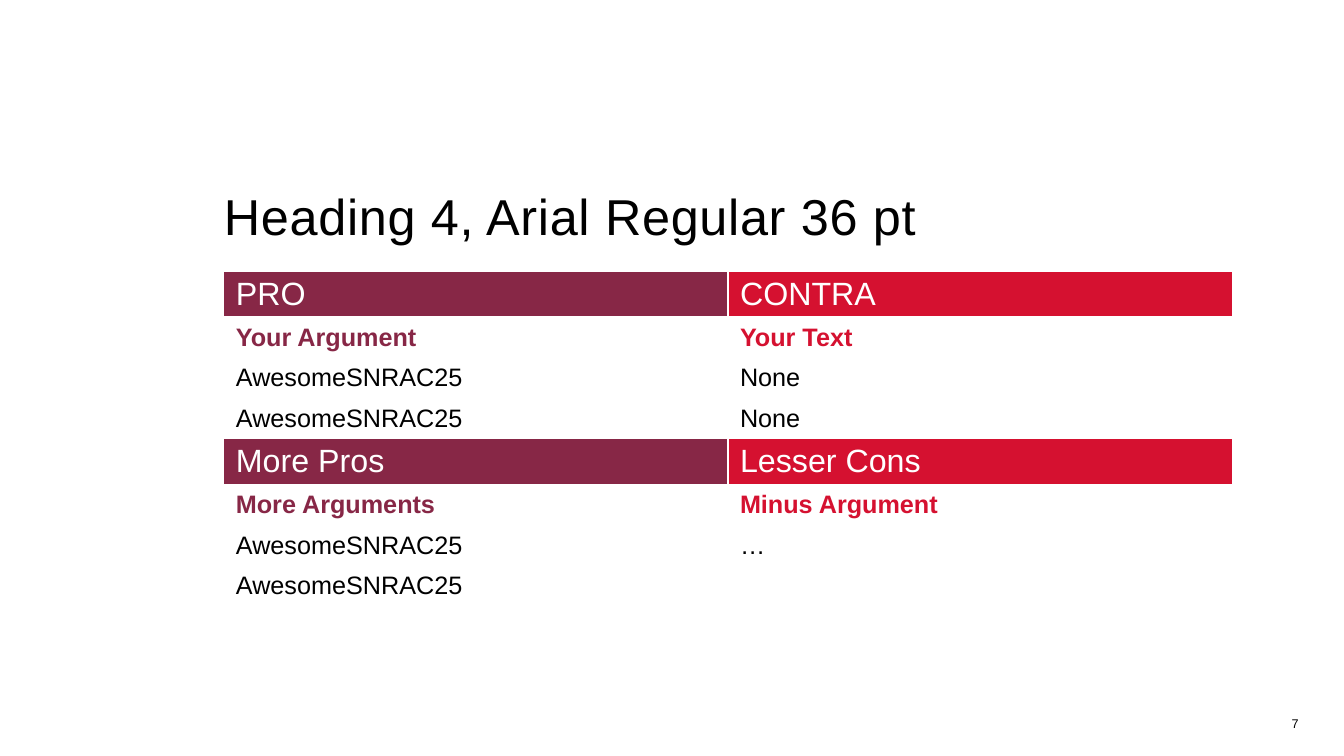
"""Build a slide that sets pro and contra arguments side by side."""
from dataclasses import dataclass

import lxml.etree
import pptx
import pptx.dml.color
import pptx.enum.text
import pptx.oxml.ns
import pptx.util

Inches = pptx.util.Inches
Pt = pptx.util.Pt
Align = pptx.enum.text.PP_ALIGN
Anchor = pptx.enum.text.MSO_ANCHOR

BLACK, WHITE = "000000", "FFFFFF"
COLUMN_COLORS = ("872746", "D51130")


@dataclass(frozen=True)
class RowStyle:
    height: float
    size: float
    top: float
    bold: bool = False
    filled: bool = False
    color: str | None = None


BAND = RowStyle(0.46, 23, 0.05, filled=True, color=WHITE)
LEAD = RowStyle(0.4, 18, 0.06, bold=True)
BODY = RowStyle(0.4, 18, 0.06, color=BLACK)

ROWS = (
    (BAND, ("PRO", "CONTRA")),
    (LEAD, ("Your Argument", "Your Text")),
    (BODY, ("AwesomeSNRAC25", "None")),
    (BODY, ("AwesomeSNRAC25", "None")),
    (BAND, ("More Pros", "Lesser Cons")),
    (LEAD, ("More Arguments", "Minus Argument")),
    (BODY, ("AwesomeSNRAC25", "…")),
    (BODY, ("AwesomeSNRAC25", "")),
)


def rgb(color: str) -> pptx.dml.color.RGBColor:
    """Turn a hex string into a colour."""
    return pptx.dml.color.RGBColor.from_string(color)


def set_font(paragraph, size: float, color: str, bold: bool = False) -> None:
    """Format the text of a paragraph."""
    font = paragraph.font
    font.name, font.size, font.bold = "Arial", Pt(size), bold
    font.color.rgb = rgb(color)


def write_line(shape, text: str, box: tuple, size: float, spacing, tracking: int,
               align, anchor) -> None:
    """Place a shape without insets and give it one line of text."""
    shape.left, shape.top, shape.width, shape.height = map(Inches, box)
    frame = shape.text_frame
    frame.margin_left = frame.margin_top = frame.margin_right = frame.margin_bottom = 0
    frame.word_wrap = True
    frame.vertical_anchor = anchor
    paragraph = frame.paragraphs[0]
    paragraph.text = text
    paragraph.alignment = align
    paragraph.line_spacing = spacing
    set_font(paragraph, size, BLACK)
    paragraph.runs[0].font._element.set("spc", str(tracking))


def add_borders(cell, bottom: float) -> None:
    """Draw white borders around a cell."""
    properties = cell._tc.get_or_add_tcPr()
    qn = pptx.oxml.ns.qn
    widths = {"a:lnL": 1, "a:lnR": 1, "a:lnT": 1, "a:lnB": bottom}
    for position, (tag, width) in enumerate(widths.items()):
        line = lxml.etree.Element(qn(tag), w=str(Pt(width)))
        fill = lxml.etree.SubElement(line, qn("a:solidFill"))
        lxml.etree.SubElement(fill, qn("a:srgbClr"), val=WHITE)
        properties.insert(position, line)


def fill_cell(cell, text: str, style: RowStyle, column_color: str, bottom: float) -> None:
    """Write and format one table cell."""
    cell.margin_left = cell.margin_right = Inches(0.12)
    cell.margin_top, cell.margin_bottom = Inches(style.top), Inches(0.05)
    paragraph = cell.text_frame.paragraphs[0]
    paragraph.text = text
    set_font(paragraph, style.size, style.color or column_color, style.bold)
    if style.filled:
        cell.fill.solid()
        cell.fill.fore_color.rgb = rgb(column_color)
    else:
        cell.fill.background()
    add_borders(cell, bottom)


def add_arguments(slide) -> None:
    """Add the table of arguments."""
    height = sum(style.height for style, _ in ROWS)
    table = slide.shapes.add_table(
        len(ROWS), len(COLUMN_COLORS), Inches(2.22), Inches(2.69), Inches(10), Inches(height)
    ).table
    table.horz_banding = False
    for row, (style, texts) in enumerate(ROWS):
        table.rows[row].height = Inches(style.height)
        for column, (text, color) in enumerate(zip(texts, COLUMN_COLORS)):
            fill_cell(table.cell(row, column), text, style, color, 3 if row == 0 else 1)


def main() -> None:
    """Build and save the presentation."""
    presentation = pptx.Presentation()
    presentation.slide_width, presentation.slide_height = Inches(13.33), Inches(7.5)
    slide = presentation.slides.add_slide(presentation.slide_layouts[5])
    write_line(slide.shapes.title, "Heading 4, Arial Regular 36 pt", (2.22, 1.85, 10, 0.65),
               36, 0.9, 50, Align.LEFT, Anchor.MIDDLE)
    add_arguments(slide)
    page_number = slide.shapes.add_textbox(0, 0, 0, 0)
    write_line(page_number, "7", (12.4, 7.09, 0.48, 0.21),
               9, Pt(12), 20, Align.RIGHT, Anchor.TOP)
    presentation.save("out.pptx")


if __name__ == "__main__":
    main()
